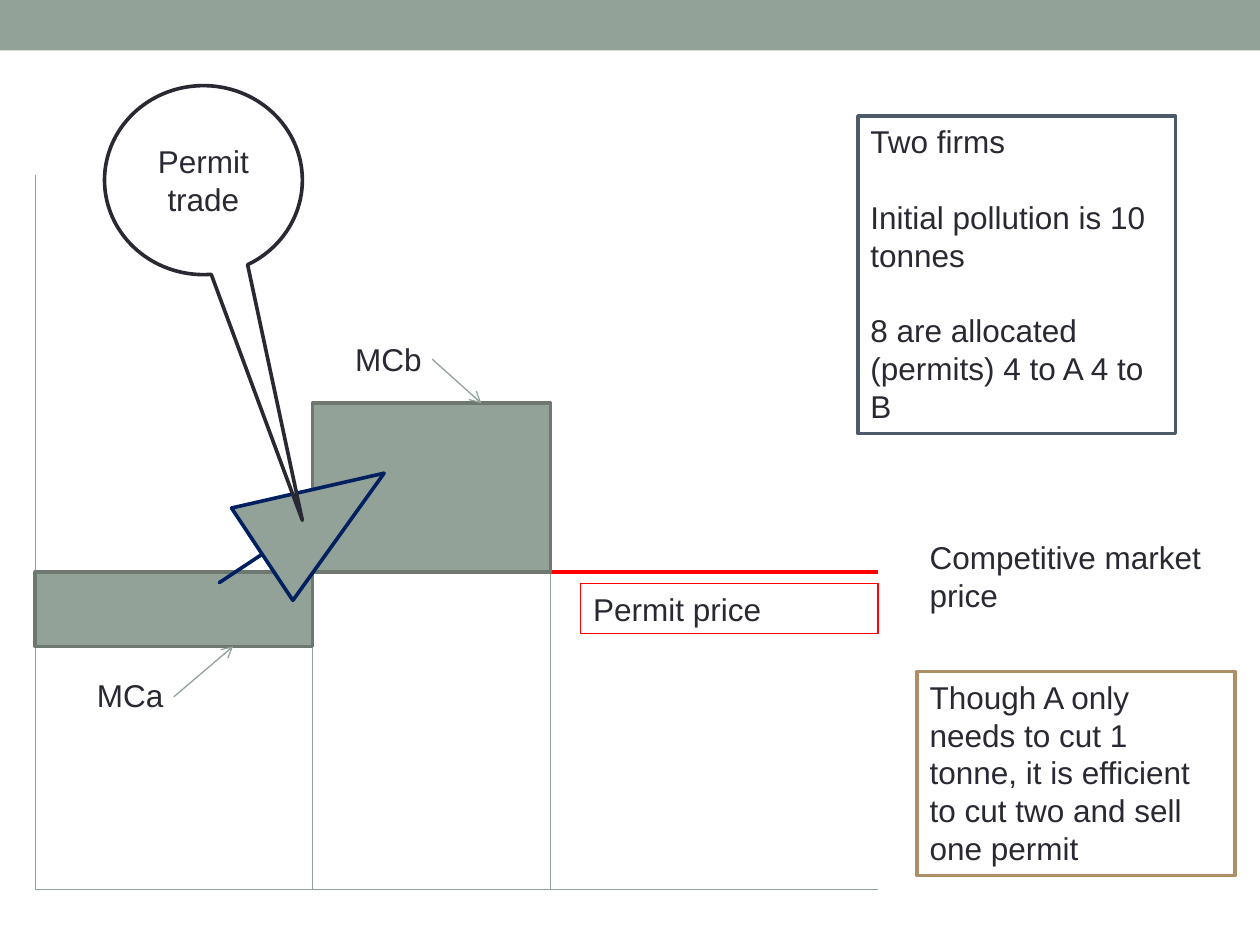
from lxml import etree
from pptx import Presentation
from pptx.dml.color import RGBColor
from pptx.enum import shapes as kinds, text as txt
from pptx.oxml.ns import qn
from pptx.util import Inches, Pt

SAGE = RGBColor(0x93, 0xA2, 0x99)
DARK_SAGE = RGBColor(0x6D, 0x78, 0x71)
INK = RGBColor(0x29, 0x29, 0x34)
SLATE = RGBColor(0x4C, 0x5A, 0x6A)
TAN = RGBColor(0xAD, 0x8F, 0x67)
NAVY = RGBColor(0x00, 0x20, 0x60)
RED = RGBColor(0xFF, 0x00, 0x00)
WHITE = RGBColor(0xFF, 0xFF, 0xFF)
THIN, THICK = 0.75, 2.08

deck = Presentation()
deck.slide_width, deck.slide_height = Inches(10), Inches(7.5)
slide = deck.slides.add_slide(deck.slide_layouts[6])


def add_block(kind, box, fill=None, line=None, width=THICK, paragraphs=(),
              align=txt.PP_ALIGN.LEFT, anchor=txt.MSO_ANCHOR.TOP):
    block = slide.shapes.add_shape(kind, *[Inches(n) for n in box])
    block.shadow.inherit = False
    if fill is None:
        block.fill.background()
    else:
        block.fill.solid()
        block.fill.fore_color.rgb = fill
    if line is None:
        block.line.fill.background()
    else:
        block.line.color.rgb = line
        block.line.width = Pt(width)
    frame = block.text_frame
    frame.word_wrap = True
    frame.vertical_anchor = anchor
    for i, words in enumerate(paragraphs):
        paragraph = frame.add_paragraph() if i else frame.paragraphs[0]
        paragraph.alignment = align
        paragraph.space_before = Pt(21.6 if i else 0)
        run = paragraph.add_run()
        run.text = words
        run.font.name, run.font.size = "Arial", Pt(18)
        run.font.color.rgb = INK
    return block


def add_line(x1, y1, x2, y2, color=SAGE, width=THIN, arrow=False):
    line = slide.shapes.add_connector(
        kinds.MSO_CONNECTOR.STRAIGHT, *[Inches(n) for n in (x1, y1, x2, y2)])
    line.line.color.rgb = color
    line.line.width = Pt(width)
    if arrow:
        etree.SubElement(line.line._get_or_add_ln(), qn("a:tailEnd"), type="arrow")
    etree.SubElement(line._element.spPr, qn("a:effectLst"))


RECT = kinds.MSO_SHAPE.RECTANGLE
axis_x, firm_a_end, firm_b_end, axis_end = 0.28, 2.48, 4.37, 6.97
axis_top, mc_b, price, mc_a, base = 1.39, 3.2, 4.54, 5.13, 7.06

add_block(RECT, (0, 0, 10, 0.4), SAGE)
add_block(RECT, (6.81, 0.92, 2.52, 2.52), WHITE, SLATE, paragraphs=[
    "Two firms",
    "Initial pollution is 10 tonnes",
    "8 are allocated (permits) 4 to A 4 to B"])

add_line(axis_x, axis_top, axis_x, base)
add_line(axis_x, base, axis_end, base)
add_line(axis_x, price, axis_end, price, RED, THICK)
add_block(RECT, (4.61, 4.63, 2.36, 0.4), None, RED, THIN, ["Permit price"])
for x in (firm_a_end, firm_b_end):
    add_line(x, mc_b, x, base)
add_line(firm_a_end, mc_b, firm_b_end, mc_b)
add_line(axis_x, mc_a, firm_a_end, mc_a)

for left, top, right, bottom in ((firm_a_end, mc_b, firm_b_end, price),
                                 (axis_x, price, firm_a_end, mc_a)):
    add_block(RECT, (left, top, right - left, bottom - top), SAGE, DARK_SAGE)

for label, left, top in (("MCa", 0.67, 5.32), ("MCb", 2.72, 2.65)):
    add_block(RECT, (left, top, 1.42, 0.4), paragraphs=[label])
add_line(1.38, 5.53, 1.85, mc_a, arrow=True)
add_line(3.43, 2.85, 3.82, mc_b, arrow=True)

add_block(RECT, (7.28, 5.33, 2.52, 1.62), WHITE, TAN, paragraphs=[
    "Though A only needs to cut 1 tonne, it is efficient to cut two and sell one permit"])
add_block(RECT, (7.28, 4.22, 2.52, 0.71), paragraphs=["Competitive market price"])

trade_arrow = add_block(kinds.MSO_SHAPE.RIGHT_ARROW, (1.61, 3.75, 1.57, 0.88), SAGE, NAVY)
trade_arrow.rotation = 326.4
trade_arrow.adjustments[0], trade_arrow.adjustments[1] = 0, 1.32

trade_callout = add_block(
    kinds.MSO_SHAPE.OVAL_CALLOUT, (0.83, 0.68, 1.57, 1.5), WHITE, INK,
    paragraphs=["Permit trade"], align=txt.PP_ALIGN.CENTER, anchor=txt.MSO_ANCHOR.MIDDLE)
trade_callout.adjustments[0], trade_callout.adjustments[1] = 0.5, 1.8

deck.save("out.pptx")
